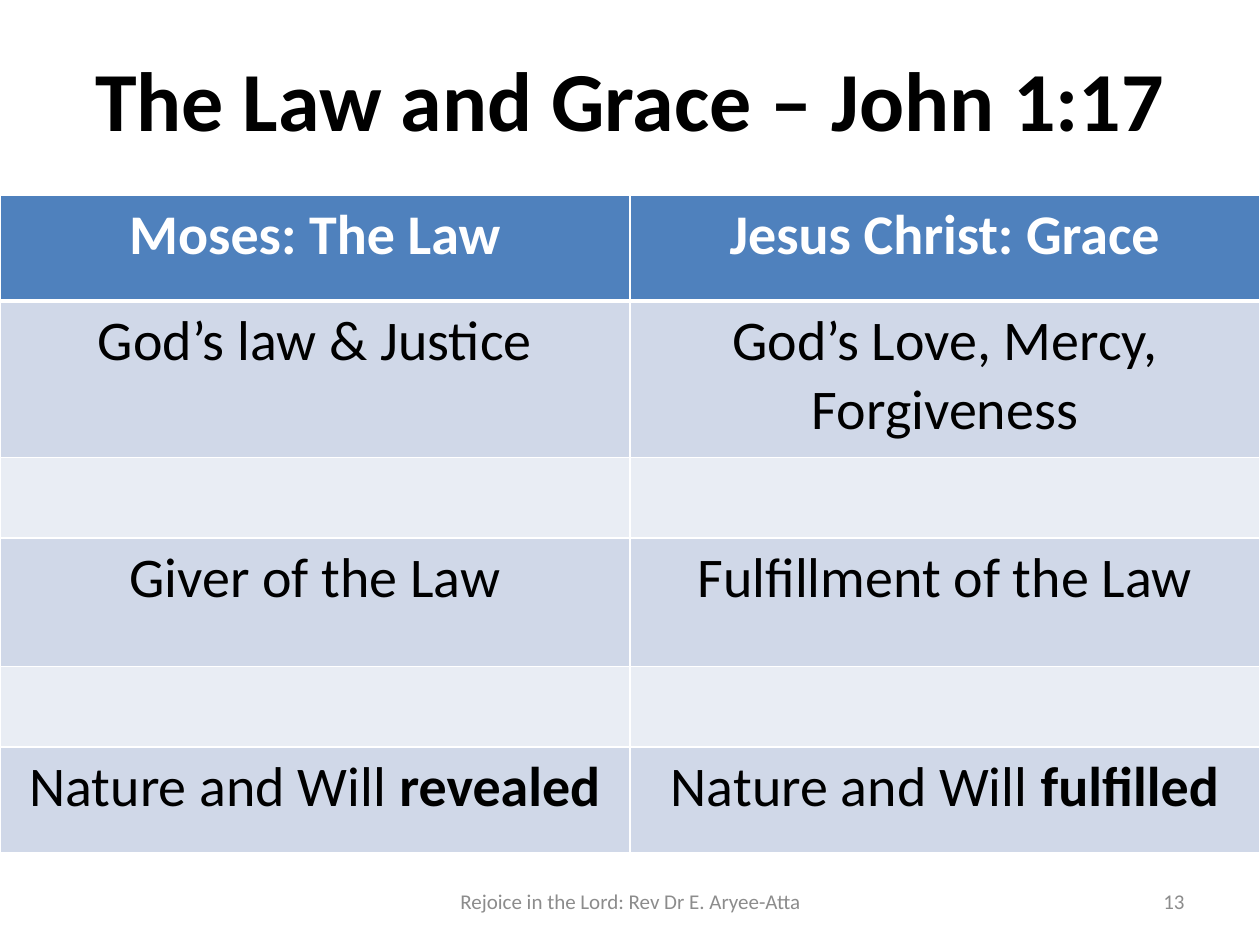
from dataclasses import dataclass

import pptx
import pptx.dml.color
import pptx.enum.text
import pptx.oxml
import pptx.oxml.ns
import pptx.util

Inches = pptx.util.Inches
Pt = pptx.util.Pt
ALIGN = pptx.enum.text.PP_ALIGN
FONT = "Calibri"
BLACK, WHITE, GREY = "000000", "FFFFFF", "8C8C8C"
HEADER, BAND, PALE = "4F81BD", "D0D8E8", "E9EDF4"


@dataclass
class Label:
    text: str
    left: float
    top: float
    width: float
    height: float
    size: int
    color: str
    bold: bool = False
    align: ALIGN = ALIGN.CENTER


@dataclass
class Row:
    height: float
    fill: str
    law: str = ""
    grace: str = ""
    law_end: str = ""
    grace_end: str = ""


LABELS = [
    Label("The Law and Grace – John 1:17", 0.5, 0, 9, 1.55, 48, BLACK, bold=True),
    Label("Rejoice in the Lord: Rev Dr E. Aryee-Atta", 3.42, 6.95, 3.17, 0.4, 12, GREY),
    Label("13", 7.17, 6.95, 2.33, 0.4, 12, GREY, align=ALIGN.RIGHT),
]

ROWS = [
    Row(0.84, HEADER, "Moses: The Law", "Jesus Christ: Grace"),
    Row(1.24, BAND, "God’s law & Justice", "God’s Love, Mercy, Forgiveness"),
    Row(0.64, PALE),
    Row(1.02, BAND, "Giver of the Law", "Fulfillment of the Law"),
    Row(0.64, PALE),
    Row(0.84, BAND, "Nature and Will ", "Nature and Will ", "revealed", "fulfilled"),
]


def rgb(color: str) -> pptx.dml.color.RGBColor:
    return pptx.dml.color.RGBColor.from_string(color)


def add_run(p, text: str, size: int, color: str, bold: bool) -> None:
    r = p.add_run()
    r.text = text
    for name, value in {"name": FONT, "size": Pt(size), "bold": bold}.items():
        setattr(r.font, name, value)
    r.font.color.rgb = rgb(color)


def add_label(s, label: Label) -> None:
    box = (label.left, label.top, label.width, label.height)
    tf = s.shapes.add_textbox(*map(Inches, box)).text_frame
    tf.word_wrap = True
    tf.vertical_anchor = pptx.enum.text.MSO_ANCHOR.MIDDLE
    p = tf.paragraphs[0]
    p.alignment = label.align
    add_run(p, label.text, label.size, label.color, label.bold)


def set_borders(cell, widths: dict[str, int]) -> None:
    # Borders must stand before the fill in the cell properties
    tcPr = cell._tc.get_or_add_tcPr()
    for i, (side, width) in enumerate(widths.items()):
        tcPr.insert(i, pptx.oxml.parse_xml(
            f'<a:{side} {pptx.oxml.ns.nsdecls("a")} w="{Pt(width)}"><a:solidFill>'
            f'<a:srgbClr val="{WHITE}"/></a:solidFill></a:{side}>'))


def add_comparison(s, rows: list[Row]) -> None:
    height = sum(row.height for row in rows)
    table = s.shapes.add_table(
        len(rows), 2, 0, Inches(1.55), Inches(10), Inches(height)).table
    for i, row in enumerate(rows):
        table.rows[i].height = Inches(row.height)
        header = i == 0
        color = WHITE if header else BLACK
        parts = [(row.law, row.law_end), (row.grace, row.grace_end)]
        for j, (text, ending) in enumerate(parts):
            cell = table.cell(i, j)
            cell.fill.solid()
            cell.fill.fore_color.rgb = rgb(row.fill)
            set_borders(cell, {"lnL": 1, "lnR": 1, "lnT": 3 if i == 1 else 1,
                               "lnB": 3 if header else 1})
            p = cell.text_frame.paragraphs[0]
            p.alignment = ALIGN.CENTER
            if text:
                add_run(p, text, 32, color, header)
            if ending:
                add_run(p, ending, 32, color, True)


def main() -> None:
    prs = pptx.Presentation()
    prs.slide_width, prs.slide_height = Inches(10), Inches(7.5)
    s = prs.slides.add_slide(prs.slide_layouts[6])

    # Title, footer and page number
    for label in LABELS:
        add_label(s, label)

    # Law and grace side by side
    add_comparison(s, ROWS)

    prs.save("out.pptx")


if __name__ == "__main__":
    main()
